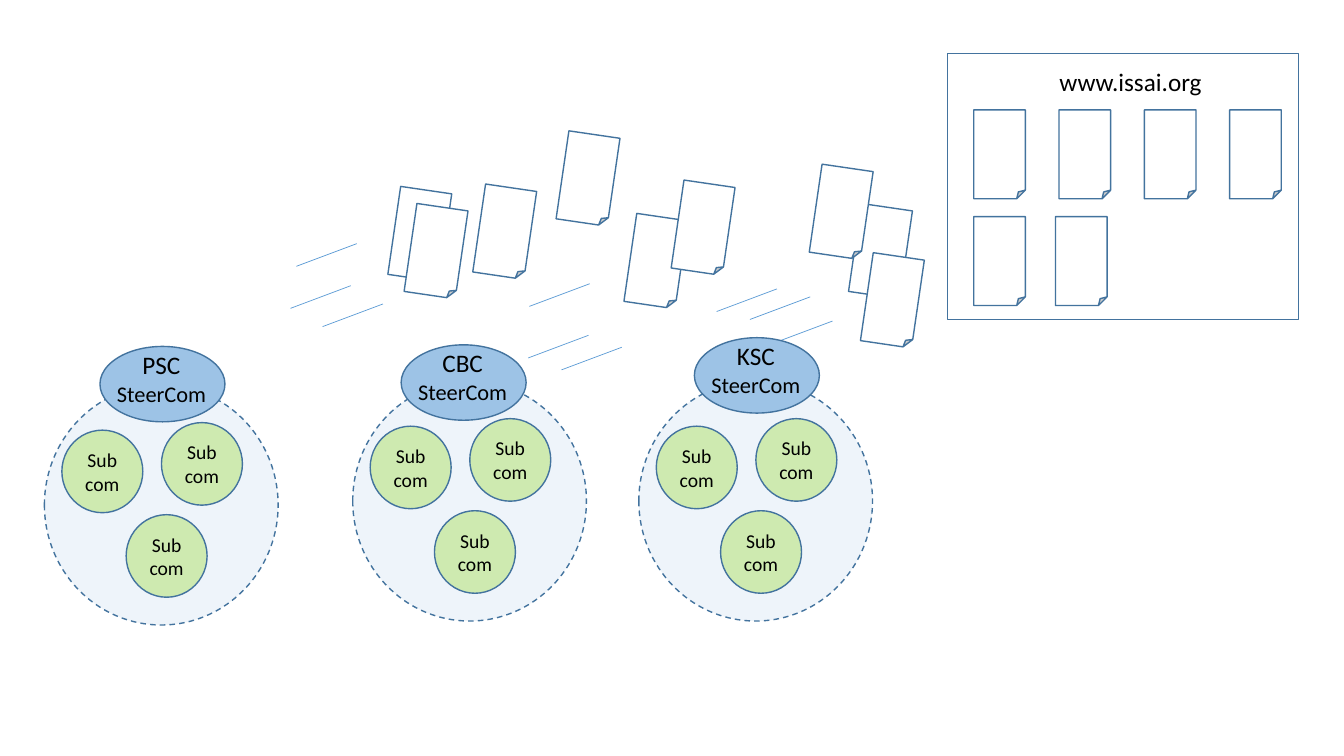
from pptx import Presentation
from pptx import util as u
from pptx.dml.color import RGBColor
from pptx.enum import dml, shapes, text
from pptx.oxml.ns import qn
from lxml import etree

OUTLINE = "43739E"
FONT = "Calibri"
SHEET_SIZE = (1.3, 2.24)

# Lengths in cm
BOARD = (23.88, 1.35, 8.84, 6.71)
FLYING_SHEETS = [(9.93, 4.78), (10.34, 5.21), (12.07, 4.72), (15.88, 5.46), (17.07, 4.62),
                 (21.54, 5.21), (20.55, 4.22), (21.84, 6.45), (14.17, 3.38)]
STREAKS = [(7.47, 6.71), (7.32, 7.77), (8.13, 8.23), (13.34, 7.72), (13.31, 9.02),
           (14.15, 9.32), (18.06, 7.85), (18.9, 8.05), (19.46, 8.66)]
# Name, circle, offset of the steering committee from the circle
COMMITTEES = [("PSC", (1.12, 9.7, 5.89, 6.05), (1.4, -0.97)),
              ("CBC", (8.89, 9.6, 5.89, 6.05), (1.22, -0.91)),
              ("KSC", (16.1, 9.6, 5.89, 6.05), (1.4, -1.09))]
SUBCOMMITTEES = [(2.06, 3.27), (2.95, 0.95), (0.44, 1.14)]


def colour(value):
    return RGBColor.from_string(value)


def lengths(values):
    return [u.Cm(value) for value in values]


def add_outlined(page, kind, box, fill):
    shape = page.shapes.add_shape(kind, *lengths(box))
    shape.shadow.inherit = False
    shape.fill.solid()
    shape.fill.fore_color.rgb = colour(fill)
    shape.line.color.rgb = colour(OUTLINE)
    shape.line.width = u.Pt(1)
    return shape


def style(font, size):
    font.name = FONT
    font.size = u.Pt(size)
    font.color.rgb = colour("000000")


def add_label(page, box):
    frame = page.shapes.add_textbox(*lengths(box)).text_frame
    frame.word_wrap = True
    return frame.paragraphs[0]


def add_sheet(page, left, top, rotation=0):
    sheet = add_outlined(page, shapes.MSO_SHAPE.FOLDED_CORNER, (left, top, *SHEET_SIZE), "FFFFFF")
    sheet.rotation = rotation


def add_board(page, box):
    left, top = box[:2]
    add_outlined(page, shapes.MSO_SHAPE.RECTANGLE, box, "FFFFFF")
    para = add_label(page, (left + 2.57, top + 0.2, 7.06, 1.02))
    para.text = "www.issai.org"
    style(para.font, 18)
    # Rows of sheets: count, pitch, offset from the top
    for count, pitch, drop in [(4, 2.15, 1.42), (2, 2.06, 4.11)]:
        for column in range(count):
            add_sheet(page, left + 0.66 + column * pitch, top + drop)


def add_streak(page, left, bottom):
    ends = lengths((left, bottom, left + 1.52, bottom - 0.57))
    streak = page.shapes.add_connector(shapes.MSO_CONNECTOR.STRAIGHT, *ends)
    streak.line.color.rgb = colour("5B9BD5")
    streak.line.width = u.Pt(0.5)
    etree.SubElement(streak.element.spPr, qn("a:effectLst"))


def add_subcommittee(page, left, top):
    circle = add_outlined(page, shapes.MSO_SHAPE.OVAL, (left, top, 2.04, 2.08), "CEEAB0")
    frame = circle.text_frame
    frame.word_wrap = True
    frame.vertical_anchor = text.MSO_ANCHOR.MIDDLE
    para = frame.paragraphs[0]
    para.text = "Sub com"
    para.alignment = text.PP_ALIGN.CENTER
    style(para.font, 14)


def add_steering(page, name, left, top):
    add_outlined(page, shapes.MSO_SHAPE.OVAL, (left, top, 3.15, 1.9), "9DC3E6")
    para = add_label(page, (left - 0.66, top - 0.05, 4.42, 1.7))
    para.alignment = text.PP_ALIGN.CENTER
    span = para.add_run()
    span.text = name
    style(span.font, 18)
    para.add_line_break()
    span = para.add_run()
    span.text = "SteerCom"
    style(span.font, 16)


def add_committee(page, name, box, steering):
    left, top = box[:2]
    circle = add_outlined(page, shapes.MSO_SHAPE.OVAL, box, "BDD7EE")
    circle.line.dash_style = dml.MSO_LINE.DASH
    tint = circle.element.spPr.find(qn("a:solidFill"))[0]
    etree.SubElement(tint, qn("a:alpha"), val="25000")
    for across, down in SUBCOMMITTEES:
        add_subcommittee(page, left + across, top + down)
    add_steering(page, name, left + steering[0], top + steering[1])


def main():
    deck = Presentation()
    deck.slide_width, deck.slide_height = lengths((33.87, 19.05))
    page = deck.slides.add_slide(deck.slide_layouts[6])

    # Website with published sheets
    add_board(page, BOARD)

    # Sheets on their way, with motion streaks
    for left, top in FLYING_SHEETS:
        add_sheet(page, left, top, 8.3)
    for left, bottom in STREAKS:
        add_streak(page, left, bottom)

    # Committees
    for name, box, steering in COMMITTEES:
        add_committee(page, name, box, steering)

    deck.save("out.pptx")


if __name__ == "__main__":
    main()
